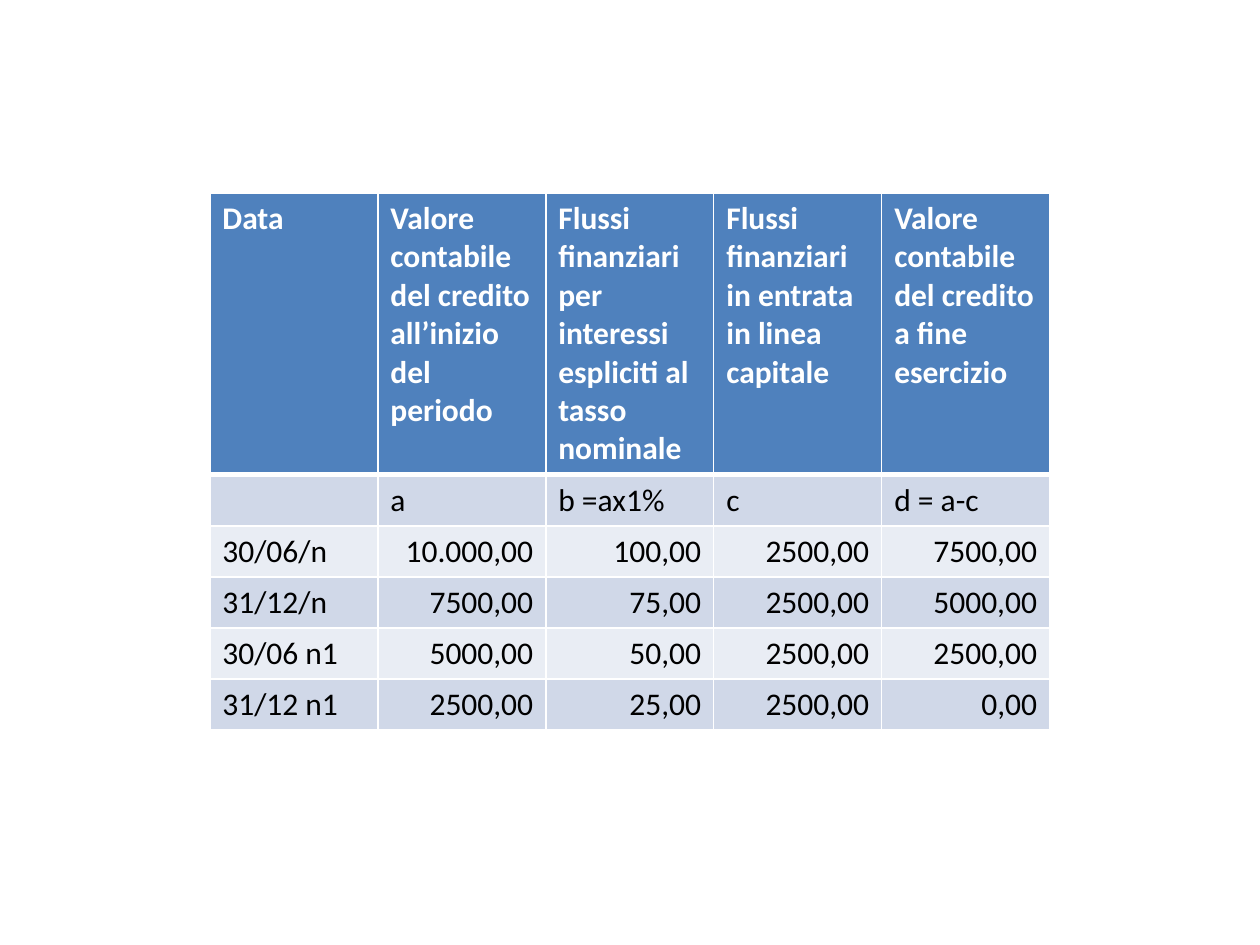
from lxml import etree
from pptx import Presentation
from pptx import util as u
from pptx.dml.color import RGBColor
from pptx.enum import text
from pptx.oxml.ns import qn

WHITE, BLACK, BLUE = "FFFFFF", "000000", "4F81BD"
BANDS = ("D0D8E8", "E9EDF4")

HEADINGS = (
    "Data",
    "Valore contabile del credito all’inizio del periodo",
    "Flussi finanziari per interessi espliciti al tasso nominale",
    "Flussi finanziari in entrata in linea capitale",
    "Valore contabile del credito a fine esercizio",
)
FORMULAS = ("", "a", "b =ax1%", "c", "d = a-c")
INSTALMENTS = (
    ("30/06/n", "10.000,00", "100,00", "2500,00", "7500,00"),
    ("31/12/n", "7500,00", "75,00", "2500,00", "5000,00"),
    ("30/06 n1", "5000,00", "50,00", "2500,00", "2500,00"),
    ("31/12 n1", "2500,00", "25,00", "2500,00", "0,00"),
)


def paint(colour_format, colour):
    colour_format.rgb = RGBColor.from_string(colour)


def add_borders(cell, widths):
    """Draw white borders; widths are points for left, right, top, bottom."""
    properties = cell._tc.get_or_add_tcPr()
    for side, width in zip("LRTB", widths):
        line = etree.SubElement(properties, qn(f"a:ln{side}"), w=str(u.Pt(width)))
        fill = etree.SubElement(line, qn("a:solidFill"))
        etree.SubElement(fill, qn("a:srgbClr"), val=WHITE)


def fill_cell(cell, wording, fill, colour, bold, align, widths):
    add_borders(cell, widths)
    cell.fill.solid()
    paint(cell.fill.fore_color, fill)
    if not wording:
        return
    paragraph = cell.text_frame.paragraphs[0]
    paragraph.alignment = align
    run = paragraph.add_run()
    run.text = wording
    run.font.name = "Calibri"
    run.font.size = u.Pt(18)
    run.font.bold = bold
    paint(run.font.color, colour)


def add_repayment_plan(slide, left, top, width, height):
    rows = (HEADINGS, FORMULAS, *INSTALMENTS)
    frame = slide.shapes.add_table(len(rows), len(HEADINGS), left, top, width, height)
    plan = frame.table
    for row in plan.rows:
        row.height = u.Cm(1.03)  # the heading row grows with its text
    frame.height = height

    for r, row in enumerate(rows):
        heading = r == 0
        fill = BLUE if heading else BANDS[(r - 1) % 2]
        colour = WHITE if heading else BLACK
        widths = (1, 1, 3 if r == 1 else 1, 3 if heading else 1)
        for c, wording in enumerate(row):
            amount = r > 1 and c > 0
            align = text.PP_ALIGN.RIGHT if amount else text.PP_ALIGN.LEFT
            fill_cell(plan.cell(r, c), wording, fill, colour, heading, align, widths)


def main():
    deck = Presentation()
    deck.slide_width, deck.slide_height = u.Cm(25.4), u.Cm(19.05)
    slide = deck.slides.add_slide(deck.slide_layouts[6])
    add_repayment_plan(slide, u.Cm(4.23), u.Cm(3.89), u.Cm(16.93), u.Cm(10.74))
    deck.save("out.pptx")


if __name__ == "__main__":
    main()
